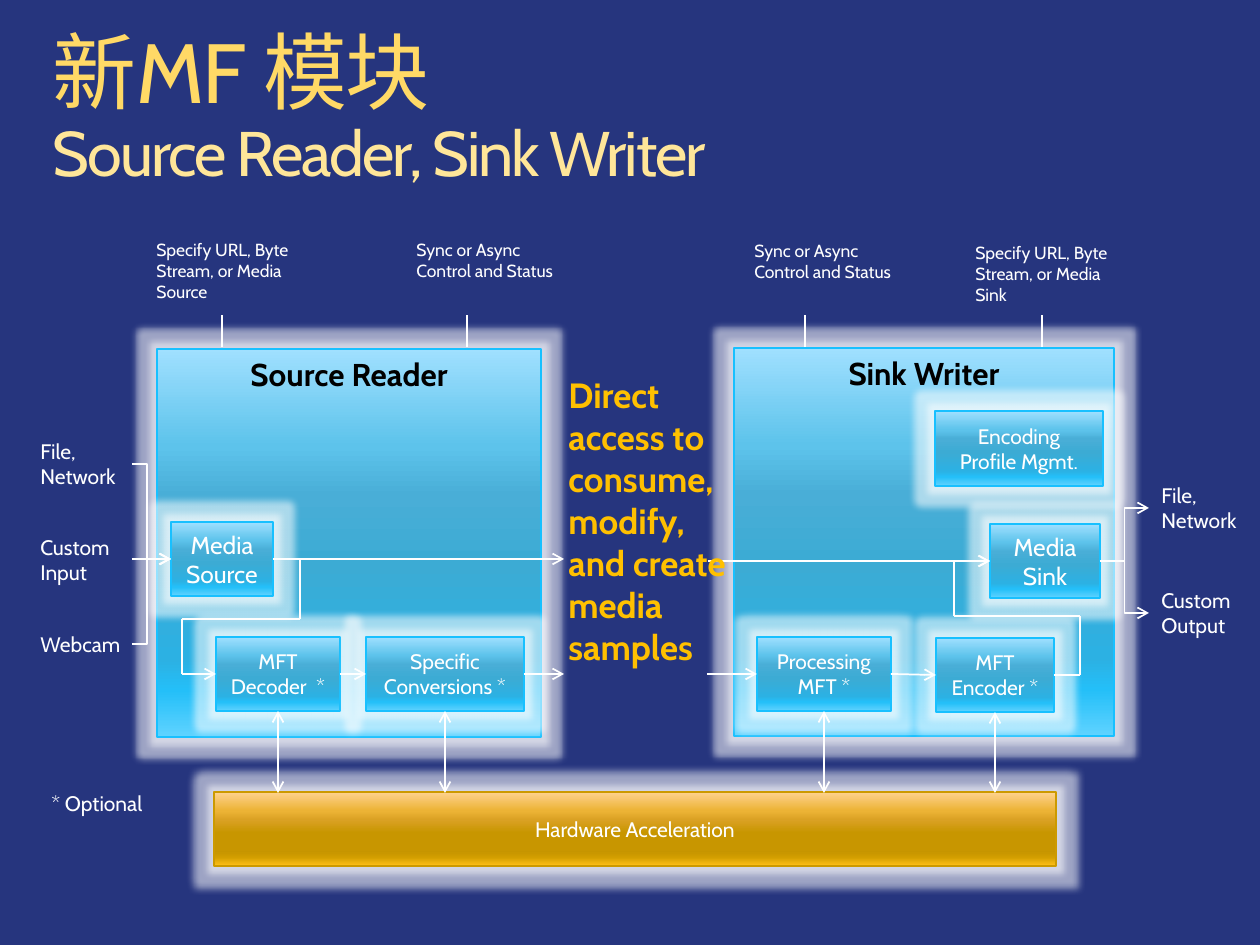
from dataclasses import dataclass
from typing import NamedTuple, Optional, Union

from lxml.etree import SubElement
from pptx import Presentation
from pptx.dml.color import RGBColor
from pptx.enum.shapes import MSO_CONNECTOR, MSO_SHAPE
from pptx.enum.text import MSO_ANCHOR, MSO_AUTO_SIZE, PP_ALIGN
from pptx.oxml.ns import qn
from pptx.util import Emu, Pt

PX = 914400 / 126  # EMU in one px
FONT = "Cabin"
COLORS = {
    "background": "26357E", "white": "FFFFFF", "heading": "000000",
    "subtitle": "FFE699", "message": "FFC000",
    "blue_edge": "18C0FF", "gold_edge": "CC9A00",
}
STOPS = (0, 25, 38, 55, 80, 88, 100)
GRADIENTS = {
    "blue": list(zip(STOPS, ("A0E0FF", "5DC3EB", "49AED7", "3CABD4", "2CB1E3", "24BFF8", "5FD3FF"))),
    "gold": list(zip(STOPS, ("FFD390", "ECB335", "DAA123", "C89600", "C69500", "D19D00", "FFC018"))),
    "title": [(0, "FFF2CC"), (41, "FFD966"), (100, "FFC000")],
}
TOP, LEFT, BOTTOM, RIGHT = range(4)


class Point(NamedTuple):
    x: int
    y: int


class Port(NamedTuple):
    block: str
    side: int


Stop = Union[Point, Port]


@dataclass
class Block:
    text: str
    x: int
    y: int
    width: int
    height: int = 74
    size: int = 12
    palette: str = "blue"
    heading: bool = False


@dataclass
class Label:
    lines: tuple
    x: int
    y: int
    width: int
    height: int
    size: int = 12
    color: str = "white"
    bold: bool = False


@dataclass
class Route:
    stops: list
    head: bool = False
    tail: bool = True
    bend: Optional[float] = None  # where an elbow turns, as a share of its width


BLOCKS = [
    Block("Source Reader", 157, 349, 384, 388, 18, heading=True),
    Block("Media Source", 171, 522, 102, size=14),
    Block("MFT Decoder  *", 216, 637, 124),
    Block("Hardware Acceleration", 214, 792, 842, palette="gold"),
    Block("Specific Conversions *", 366, 637, 158),
    Block("Sink Writer", 734, 348, 380, 388, 18, heading=True),
    Block("Media Sink", 990, 524, 110, size=14),
    Block("MFT Encoder *", 936, 638, 118),
    Block("Encoding Profile Mgmt.", 935, 411, 168, 75),
    Block("Processing MFT *", 757, 637, 134),
]
SOURCE, DECODER, CONVERSIONS = "Media Source", "MFT Decoder  *", "Specific Conversions *"
SINK, ENCODER, PROCESSING = "Media Sink", "MFT Encoder *", "Processing MFT *"

LABELS = [
    Label(("File,", "Network"), 28, 432, 105, 63),
    Label(("Custom Input",), 28, 528, 105, 63),
    Label(("Webcam",), 28, 625, 105, 38),
    Label(("File,", "Network"), 1149, 476, 105, 63),
    Label(("Custom Output",), 1149, 581, 105, 63),
    Label(("* Optional",), 39, 784, 165, 38),
    Label(("Specify URL, Byte Stream, or Media Source",), 144, 233, 168, 77, 10),
    Label(("Sync or Async Control and Status",), 404, 233, 168, 77, 10),
    Label(("Sync or Async Control and Status",), 742, 234, 168, 77, 10),
    Label(("Specify URL, Byte Stream, or Media Sink",), 963, 236, 168, 77, 10),
]
MESSAGE = Label(("Direct access to consume, modify, and create media samples",),
                556, 367, 189, 352, 20, "message", True)

ROUTES = [
    # Controls entering the panels from above
    *[Route([Point(x, 315), Point(x, 347)], tail=False) for x in (222, 467, 805, 1042)],
    # Inputs
    Route([Point(132, 464), Port(SOURCE, LEFT)], bend=0.381),
    Route([Point(132, 559), Port(SOURCE, LEFT)]),
    Route([Point(132, 644), Port(SOURCE, LEFT)], bend=0.381),
    # Source reader flow
    Route([Port(SOURCE, RIGHT), Point(300, 559), Point(564, 559)]),
    Route([Point(300, 559), Point(300, 619), Point(182, 619), Point(182, 674),
           Port(DECODER, LEFT)]),
    Route([Port(DECODER, RIGHT), Port(CONVERSIONS, LEFT)]),
    Route([Port(CONVERSIONS, RIGHT), Point(564, 674)]),
    # Sink writer flow
    Route([Point(708, 561), Port(SINK, LEFT)]),
    Route([Point(707, 674), Port(PROCESSING, LEFT)]),
    Route([Port(PROCESSING, RIGHT), Port(ENCODER, LEFT)]),
    Route([Port(ENCODER, RIGHT), Point(1080, 675), Point(1080, 616), Point(954, 616),
           Point(954, 561), Port(SINK, LEFT)]),
    # Outputs
    *[Route([Port(SINK, RIGHT), Point(1149, y)], bend=0.5) for y in (508, 613)],
    # Hardware links
    *[Route([Port(name, BOTTOM), Point(x, 793)], head=True)
      for name, x in ((DECODER, 278), (CONVERSIONS, 445), (PROCESSING, 824), (ENCODER, 995))],
]


def px(value: float) -> Emu:
    return Emu(round(value * PX))


def rgb(name: str) -> RGBColor:
    return RGBColor.from_string(COLORS[name])


def fill_gradient(fill, owner, palette: str) -> None:
    """Fill with a top-to-bottom gradient; owner is the element that holds it."""
    fill.gradient()
    fill.gradient_angle = 270
    stops = owner.find(qn("a:gradFill")).find(qn("a:gsLst"))
    for old in list(stops):
        stops.remove(old)
    for position, color in GRADIENTS[palette]:
        stop = SubElement(stops, qn("a:gs"), pos=str(position * 1000))
        SubElement(stop, qn("a:srgbClr"), val=color)


def add_run(paragraph, text: str, size: int, color: str, bold: bool = False):
    run = paragraph.add_run()
    run.text = text
    run.font.name, run.font.size, run.font.bold = FONT, Pt(size), bold
    run.font.color.rgb = rgb(color)
    return run


def draw_block(slide, block: Block):
    shape = slide.shapes.add_shape(MSO_SHAPE.RECTANGLE, px(block.x), px(block.y),
                                   px(block.width), px(block.height))
    properties = shape._element.spPr
    fill_gradient(shape.fill, properties, block.palette)
    shape.line.color.rgb = rgb(f"{block.palette}_edge")
    shape.line.width = Pt(0.75)
    # Soft white glow in place of the shadow
    shape.shadow.inherit = False
    glow = SubElement(properties.find(qn("a:effectLst")), qn("a:glow"), rad=str(Pt(8)))
    tint = SubElement(glow, qn("a:srgbClr"), val=COLORS["white"])
    SubElement(tint, qn("a:alpha"), val="55000")
    frame = shape.text_frame
    frame.word_wrap = True
    frame.vertical_anchor = MSO_ANCHOR.TOP if block.heading else MSO_ANCHOR.MIDDLE
    frame.paragraphs[0].alignment = PP_ALIGN.CENTER
    add_run(frame.paragraphs[0], block.text, block.size,
            "heading" if block.heading else "white", block.heading)
    return shape


def draw_label(slide, label: Label) -> None:
    frame = slide.shapes.add_textbox(px(label.x), px(label.y), px(label.width),
                                     px(label.height)).text_frame
    frame.word_wrap = True
    for index, line in enumerate(label.lines):
        paragraph = frame.add_paragraph() if index else frame.paragraphs[0]
        add_run(paragraph, line, label.size, label.color, label.bold)


def draw_link(slide, blocks: dict, start: Stop, end: Stop, head: bool, tail: bool,
              bend: Optional[float]) -> None:
    kind = MSO_CONNECTOR.STRAIGHT if bend is None else MSO_CONNECTOR.ELBOW
    ends = [stop if isinstance(stop, Point) else Point(0, 0) for stop in (start, end)]
    link = slide.shapes.add_connector(kind, *[px(value) for point in ends for value in point])
    for stop, connect in ((start, link.begin_connect), (end, link.end_connect)):
        if isinstance(stop, Port):
            connect(blocks[stop.block], stop.side)
    link.line.color.rgb = rgb("white")
    link.line.width = Pt(1)
    properties = link._element.spPr
    SubElement(properties, qn("a:effectLst"))
    for shown, tag in ((head, "a:headEnd"), (tail, "a:tailEnd")):
        if shown:
            SubElement(properties.find(qn("a:ln")), qn(tag), type="arrow")
    if bend is not None:
        guides = properties.find(qn("a:prstGeom")).find(qn("a:avLst"))
        SubElement(guides, qn("a:gd"), name="adj1", fmla=f"val {round(bend * 100000)}")


def draw_route(slide, blocks: dict, route: Route) -> None:
    last = len(route.stops) - 2
    for index, (start, end) in enumerate(zip(route.stops, route.stops[1:])):
        draw_link(slide, blocks, start, end, route.head and index == 0,
                  route.tail and index == last, route.bend)


def draw_title(slide) -> None:
    title = slide.shapes.title
    title.left, title.top, title.width, title.height = px(53), px(31), px(1154), px(160)
    frame = title.text_frame
    frame.auto_size, frame.word_wrap = MSO_AUTO_SIZE.NONE, True
    frame.vertical_anchor = MSO_ANCHOR.TOP
    frame.margin_left = frame.margin_top = frame.margin_right = frame.margin_bottom = 0
    paragraph = frame.paragraphs[0]
    paragraph.alignment, paragraph.line_spacing = PP_ALIGN.LEFT, 0.9
    heading = add_run(paragraph, "新MF 模块", 48, "subtitle")
    fill_gradient(heading.font.fill, heading._r.rPr, "title")
    paragraph.add_line_break()
    subtitle = add_run(paragraph, "Source Reader, Sink Writer", 36, "subtitle")
    for run in (heading, subtitle):
        run._r.rPr.set("spc", "-120")


def main() -> None:
    deck = Presentation()
    deck.slide_width, deck.slide_height = px(1260), px(945)
    slide = deck.slides.add_slide(deck.slide_layouts[5])
    slide.background.fill.solid()
    slide.background.fill.fore_color.rgb = rgb("background")
    draw_title(slide)
    blocks = {block.text: draw_block(slide, block) for block in BLOCKS}
    for label in LABELS:
        draw_label(slide, label)
    for route in ROUTES:
        draw_route(slide, blocks, route)
    draw_label(slide, MESSAGE)
    deck.save("out.pptx")


if __name__ == "__main__":
    main()
